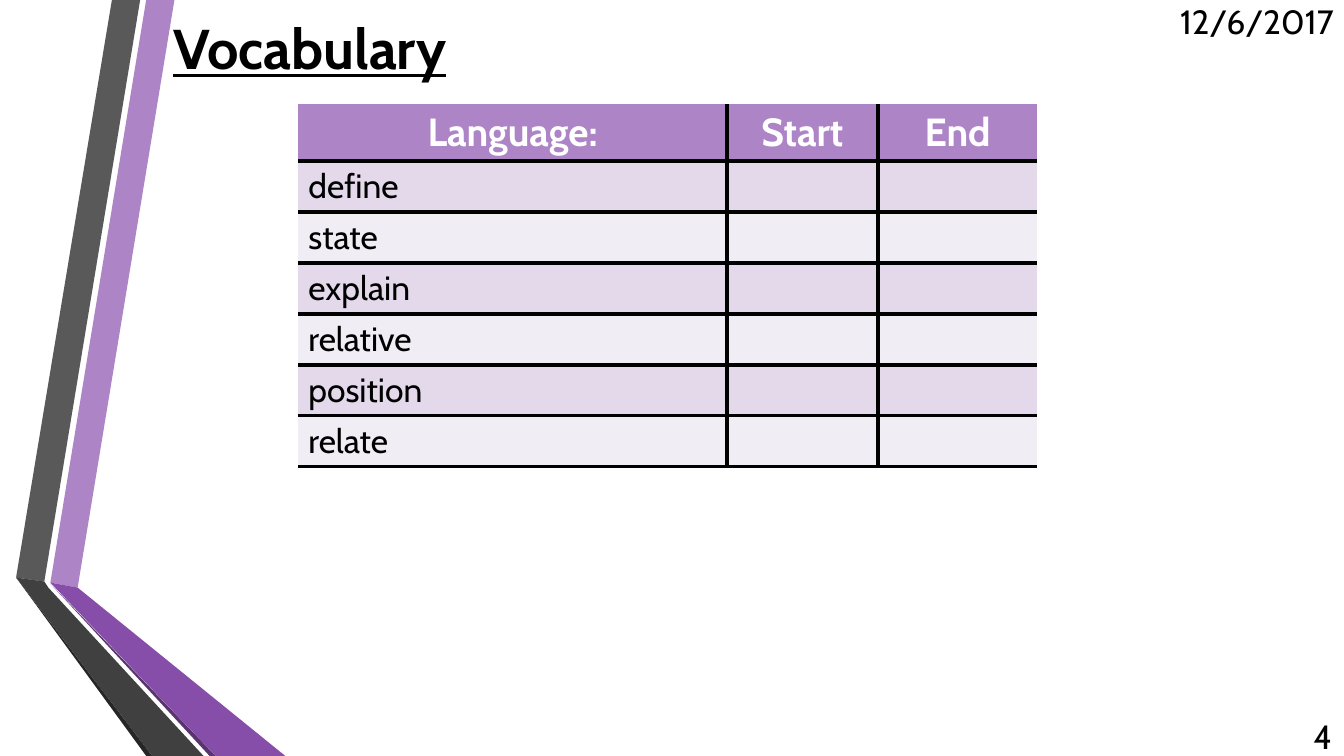
import pptx
import pptx.dml.color
import pptx.enum.text
import pptx.oxml.ns
import pptx.util
from lxml import etree

RGBColor = pptx.dml.color.RGBColor
PP_ALIGN = pptx.enum.text.PP_ALIGN
MIDDLE = pptx.enum.text.MSO_ANCHOR.MIDDLE
Pt = pptx.util.Pt
qn = pptx.oxml.ns.qn

BLACK = RGBColor(0x00, 0x00, 0x00)
WHITE = RGBColor(0xFF, 0xFF, 0xFF)
LILAC = RGBColor(0xAD, 0x84, 0xC6)
PURPLE = RGBColor(0x87, 0x4E, 0xA9)
PLUM = RGBColor(0x5A, 0x34, 0x71)
GREY = RGBColor(0x59, 0x59, 0x59)
CHARCOAL = RGBColor(0x40, 0x40, 0x40)
SOOT = RGBColor(0x26, 0x26, 0x26)
BANDS = (RGBColor(0xE3, 0xD9, 0xEA), RGBColor(0xF1, 0xED, 0xF5))

FONT = "Cabin"
SLIDE_W = pptx.util.Inches(13.333)
SLIDE_H = pptx.util.Inches(7.5)

RIBBONS = [
    (LILAC, [(3.75, 77.07), (5.78, 77.73), (12.98, 0), (10.88, 0)]),
    (GREY, [(10.43, 0), (8.33, 0), (1.2, 76.4), (3.3, 76.93)]),
    (SOOT, [(1.2, 76.4), (10.88, 100), (11.33, 100)]),
    (PLUM, [(3.75, 77.2), (15.6, 100), (16.05, 100)]),
    (PURPLE, [(3.75, 77.07), (16.05, 100), (21.23, 100), (5.78, 77.73)]),
    (CHARCOAL, [(15.15, 100), (3.6, 77.73), (3.3, 76.93), (1.2, 76.4), (11.33, 100)]),
]
HEADINGS = ["Language:", "Start", "End"]
WORDS = ["define", "state", "explain", "relative", "position", "relate"]
COLUMN_SHARES = [31.88, 11.25, 11.85]
HEADER_SHARE = 7.6
ROW_SHARE = 6.73


def across(percent):
    return round(SLIDE_W * percent / 100)


def down(percent):
    return round(SLIDE_H * percent / 100)


def area(left, top, width, height):
    return across(left), down(top), across(width), down(height)


def style(p, size, color=BLACK, align=PP_ALIGN.LEFT, bold=False):
    p.alignment = align
    p.font.name = FONT
    p.font.size = Pt(size)
    p.font.bold = bold
    p.font.color.rgb = color


def add_ribbon(slide, color, points):
    corners = [(across(x), down(y)) for x, y in points]
    builder = slide.shapes.build_freeform(*corners[0])
    builder.add_line_segments(corners[1:], close=True)
    sp = builder.convert_to_shape()
    sp.shadow.inherit = False
    sp.fill.solid()
    sp.fill.fore_color.rgb = color
    sp.line.fill.background()


def add_title(slide, text):
    sp = slide.shapes.title
    slide.shapes.element.append(sp.element)
    sp.left, sp.top, sp.width, sp.height = area(12.15, 0.13, 82.2, 12.27)
    tf = sp.text_frame
    tf.text = text
    tf.vertical_anchor = MIDDLE
    p = tf.paragraphs[0]
    style(p, 40, bold=True)
    p.font.underline = True


def add_corner_text(slide, text, box):
    tf = slide.shapes.add_textbox(*box).text_frame
    tf.word_wrap = True
    tf.vertical_anchor = MIDDLE
    tf.text = text
    style(tf.paragraphs[0], 24, align=PP_ALIGN.RIGHT)


def set_borders(cell, edges):
    tc_pr = cell._tc.get_or_add_tcPr()
    for edge in "LRTB":
        ln = etree.SubElement(tc_pr, qn(f"a:ln{edge}"), w=str(Pt(3)))
        if edge in edges:
            fill = etree.SubElement(ln, qn("a:solidFill"))
            etree.SubElement(fill, qn("a:srgbClr"), val=str(BLACK))
        else:
            etree.SubElement(ln, qn("a:noFill"))


def add_vocabulary_table(slide):
    rows = [HEADINGS] + [[word, "", ""] for word in WORDS]
    box = area(22.2, 13.73, sum(COLUMN_SHARES), HEADER_SHARE + ROW_SHARE * len(WORDS))
    table = slide.shapes.add_table(len(rows), len(HEADINGS), *box).table
    for column, share in zip(table.columns, COLUMN_SHARES):
        column.width = across(share)
    for i, texts in enumerate(rows):
        header = i == 0
        table.rows[i].height = down(HEADER_SHARE if header else ROW_SHARE)
        for j, text in enumerate(texts):
            cell = table.cell(i, j)
            edges = "B" + ("" if header else "T")
            edges += ("L" if j > 0 else "") + ("R" if j < len(texts) - 1 else "")
            set_borders(cell, edges)
            cell.fill.solid()
            cell.fill.fore_color.rgb = LILAC if header else BANDS[(i - 1) % 2]
            cell.text = text
            p = cell.text_frame.paragraphs[0]
            if header:
                cell.vertical_anchor = MIDDLE
                style(p, 28, WHITE, PP_ALIGN.CENTER, True)
            else:
                style(p, 24)


def main():
    prs = pptx.Presentation()
    prs.slide_width, prs.slide_height = SLIDE_W, SLIDE_H
    slide = prs.slides.add_slide(prs.slide_layouts[5])
    for color, points in RIBBONS:
        add_ribbon(slide, color, points)
    add_title(slide, "Vocabulary")
    add_corner_text(slide, "12/6/2017", area(84.68, 0.13, 15.3, 5.33))
    add_corner_text(slide, "4", area(94.35, 94.67, 5.5, 5.33))
    add_vocabulary_table(slide)
    prs.save("out.pptx")


if __name__ == "__main__":
    main()
